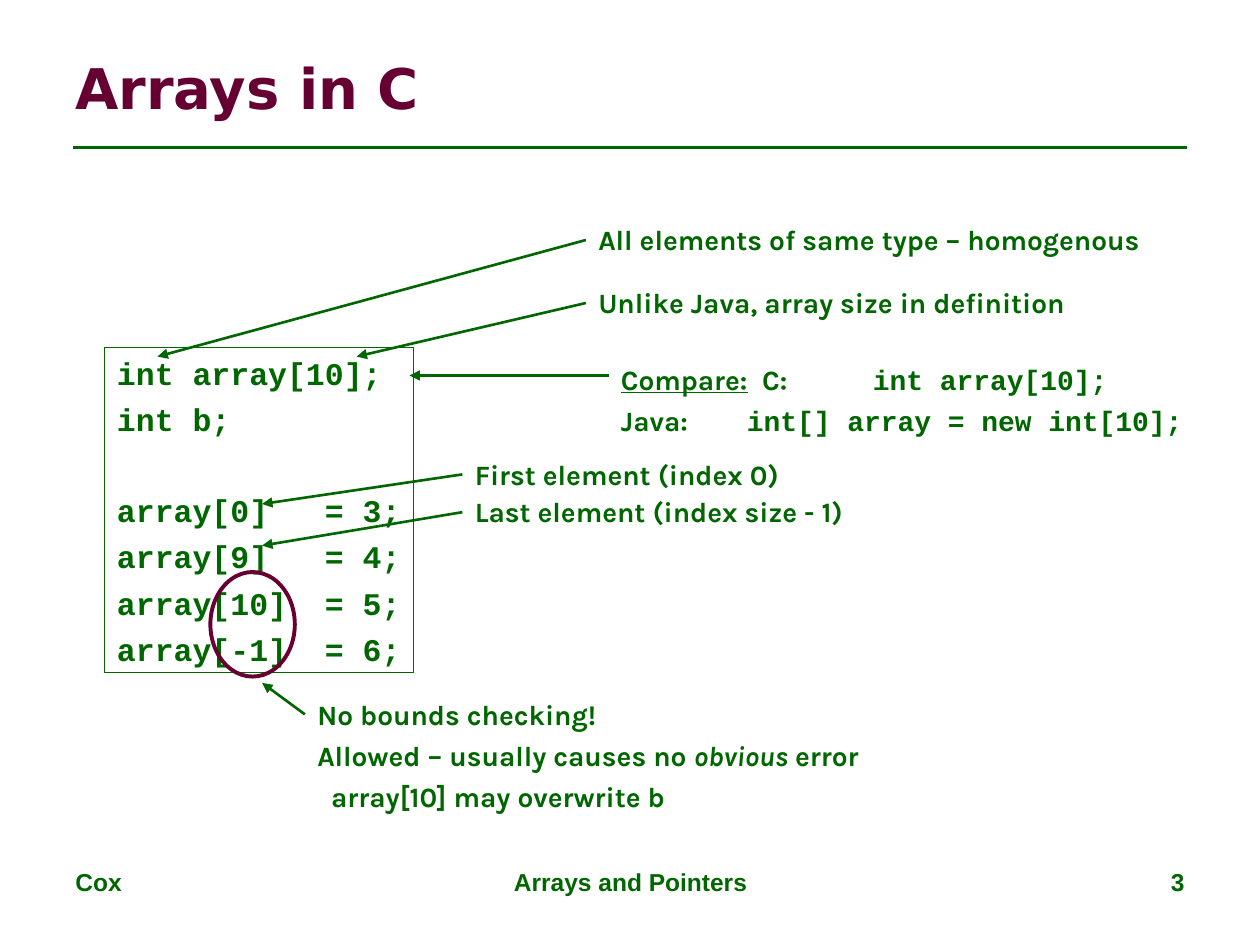
from dataclasses import dataclass

from lxml.etree import SubElement
from pptx import Presentation
from pptx.dml.color import RGBColor
from pptx.enum.shapes import MSO_CONNECTOR, MSO_SHAPE
from pptx.enum.text import MSO_ANCHOR, PP_ALIGN
from pptx.oxml.ns import qn
from pptx.util import Inches, Pt

GREEN = RGBColor(0x00, 0x66, 0x00)
MAROON = RGBColor(0x66, 0x00, 0x33)
BODY, CODE, FOOTER, TITLE = "Karla", "Courier New", "Arial", "DejaVu Sans"
LEFT_SIDE = 1


@dataclass(frozen=True)
class Span:
    text: str
    font: str | None = None
    underline: bool = False
    italic: bool = False


@dataclass(frozen=True)
class Line:
    spans: tuple[Span, ...]
    before: float = 0
    indent: float = 0
    tabs: tuple[float, ...] = ()


@dataclass(frozen=True)
class Style:
    font: str
    size: float
    color: RGBColor = GREEN
    align: PP_ALIGN = PP_ALIGN.LEFT


@dataclass(frozen=True)
class Label:
    text: str
    left: float
    top: float
    width: float
    target: tuple[float, float]


@dataclass(frozen=True)
class FooterPart:
    text: str
    left: float
    width: float
    align: PP_ALIGN


NOTE = Style(BODY, 16)
LABELS = (
    Label("All elements of same type – homogenous", 4.65, 1.72, 4.8, (1.25, 2.83)),
    Label("Unlike Java, array size in definition", 4.65, 2.22, 4.16, (2.83, 2.83)),
    Label("First element (index 0)", 3.67, 3.58, 2.77, (2.08, 4)),
    Label("Last element (index size - 1)", 3.67, 3.88, 3.39, (2.08, 4.33)),
)
DECLARATIONS = ("int array[10];", "int b;")
ASSIGNMENTS = (("0", 3), ("9", 4), ("10", 5), ("-1", 6))
COMPARISON = (
    Line((Span("Compare:", BODY, underline=True), Span("\tC:", BODY),
          Span("\tint array[10];", CODE)), 4, tabs=(1.12, 2)),
    Line((Span("Java:", BODY), Span("\tint[] array = new int[10];", CODE)), 4, tabs=(1,)),
)
WARNING = (
    Line((Span("No bounds checking!"),), 4),
    Line((Span("Allowed – usually causes no "), Span("obvious", italic=True),
          Span(" error")), 4),
    Line((Span("array[10] may overwrite b"),), 4, indent=0.11),
)
FOOTERS = (
    FooterPart("Cox", 0.5, 2.33, PP_ALIGN.LEFT),
    FooterPart("Arrays and Pointers", 3.42, 3.17, PP_ALIGN.CENTER),
    FooterPart("3", 7.17, 2.33, PP_ALIGN.RIGHT),
)


def plain(text: str) -> tuple[Line, ...]:
    """Wrap one string as a single line."""
    return (Line((Span(text),)),)


def code_lines() -> tuple[Line, ...]:
    """Lay out the declarations and the assignments set apart below them."""
    declared = [Line((Span(text),), 5) for text in DECLARATIONS]
    assigned = [
        Line((Span(f"array[{index}]\t= {value};"),), 30 if row == 0 else 5, tabs=(1.65,))
        for row, (index, value) in enumerate(ASSIGNMENTS)
    ]
    return (*declared, *assigned)


def write(box, lines: tuple[Line, ...], style: Style, wrap: bool = False) -> None:
    """Fill a shape with styled paragraphs."""
    frame = box.text_frame
    frame.word_wrap = wrap
    for number, line in enumerate(lines):
        para = frame.add_paragraph() if number else frame.paragraphs[0]
        para.alignment = style.align
        para.space_before = Pt(line.before)
        properties = para._p.get_or_add_pPr()
        if line.indent:
            properties.set("marL", str(Inches(line.indent)))
        if line.tabs:
            stops = SubElement(properties, qn("a:tabLst"))
            for position in line.tabs:
                SubElement(stops, qn("a:tab"), pos=str(Inches(position)), algn="l")
        para.font.name = style.font
        para.font.size = Pt(style.size)
        para.font.bold = True
        para.font.color.rgb = style.color
        for span in line.spans:
            run = para.add_run()
            run.text = span.text
            if span.font:
                run.font.name = span.font
            if span.underline:
                run.font.underline = True
            if span.italic:
                run.font.italic = True


def add_text(page, left: float, top: float, width: float, height: float,
             lines: tuple[Line, ...], style: Style, wrap: bool = False):
    """Add a text box and return it."""
    box = page.shapes.add_textbox(Inches(left), Inches(top), Inches(width), Inches(height))
    write(box, lines, style, wrap)
    return box


def add_line(page, start: tuple[float, float], end: tuple[float, float], arrow: bool = True):
    """Add a straight green line, with an arrowhead at its end if asked."""
    connector = page.shapes.add_connector(
        MSO_CONNECTOR.STRAIGHT, *(Inches(value) for value in (*start, *end)))
    connector.line.color.rgb = GREEN
    connector.line.width = Pt(1.5)
    if arrow:
        SubElement(connector.line._get_or_add_ln(), qn("a:tailEnd"), type="triangle")
    SubElement(connector._element.spPr, qn("a:effectLst"))
    return connector


def add_outline(page, kind: MSO_SHAPE, left: float, top: float, width: float,
                height: float, color: RGBColor, weight: float):
    """Add an unfilled outlined shape and return it."""
    shape = page.shapes.add_shape(
        kind, Inches(left), Inches(top), Inches(width), Inches(height))
    shape.shadow.inherit = False
    shape.fill.background()
    shape.line.color.rgb = color
    shape.line.width = Pt(weight)
    return shape


def add_label(page, label: Label) -> None:
    """Add a label with an arrow from its left side to the code."""
    height = 0.37
    box = add_text(page, label.left, label.top, label.width, height, plain(label.text), NOTE)
    arrow = add_line(page, (label.left, label.top + height / 2), label.target)
    arrow.begin_connect(box, LEFT_SIDE)


def main() -> None:
    """Build and save the slide."""
    deck = Presentation()
    deck.slide_width, deck.slide_height = Inches(10), Inches(7.5)
    page = deck.slides.add_slide(deck.slide_layouts[6])

    add_line(page, (0.58, 1.17), (9.42, 1.17), arrow=False)
    for part in FOOTERS:
        add_text(page, part.left, 6.83, part.width, 0.52, plain(part.text),
                 Style(FOOTER, 14, align=part.align), wrap=True)
    title = add_text(page, 0.5, 0.3, 9, 0.78, plain("Arrays in C"),
                     Style(TITLE, 32, MAROON), wrap=True)
    title.text_frame.vertical_anchor = MSO_ANCHOR.MIDDLE

    code_box = add_outline(page, MSO_SHAPE.RECTANGLE, 0.83, 2.76, 2.45, 2.58, GREEN, 0.75)
    code_box.text_frame.vertical_anchor = MSO_ANCHOR.TOP
    write(code_box, code_lines(), Style(CODE, 18))
    add_outline(page, MSO_SHAPE.OVAL, 1.67, 4.54, 0.67, 0.83, MAROON, 2.25)

    for label in LABELS:
        add_label(page, label)
    add_text(page, 4.83, 2.83, 4.68, 0.69, COMPARISON, NOTE)
    add_line(page, (4.83, 2.98), (3.25, 2.98))
    add_text(page, 2.42, 5.49, 4.94, 1.02, WARNING, NOTE)
    add_line(page, (2.42, 5.67), (2.08, 5.42))
    deck.save("out.pptx")


if __name__ == "__main__":
    main()
